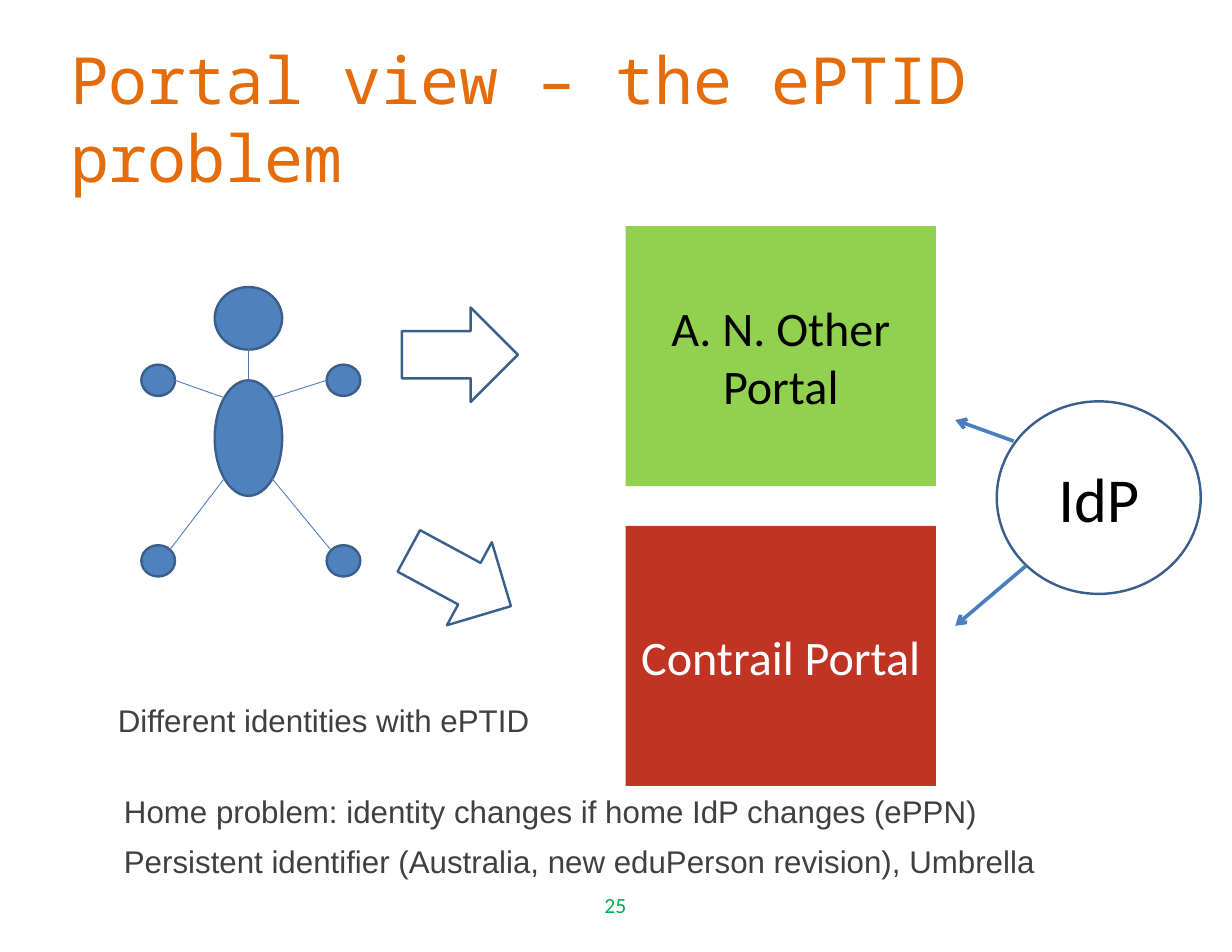
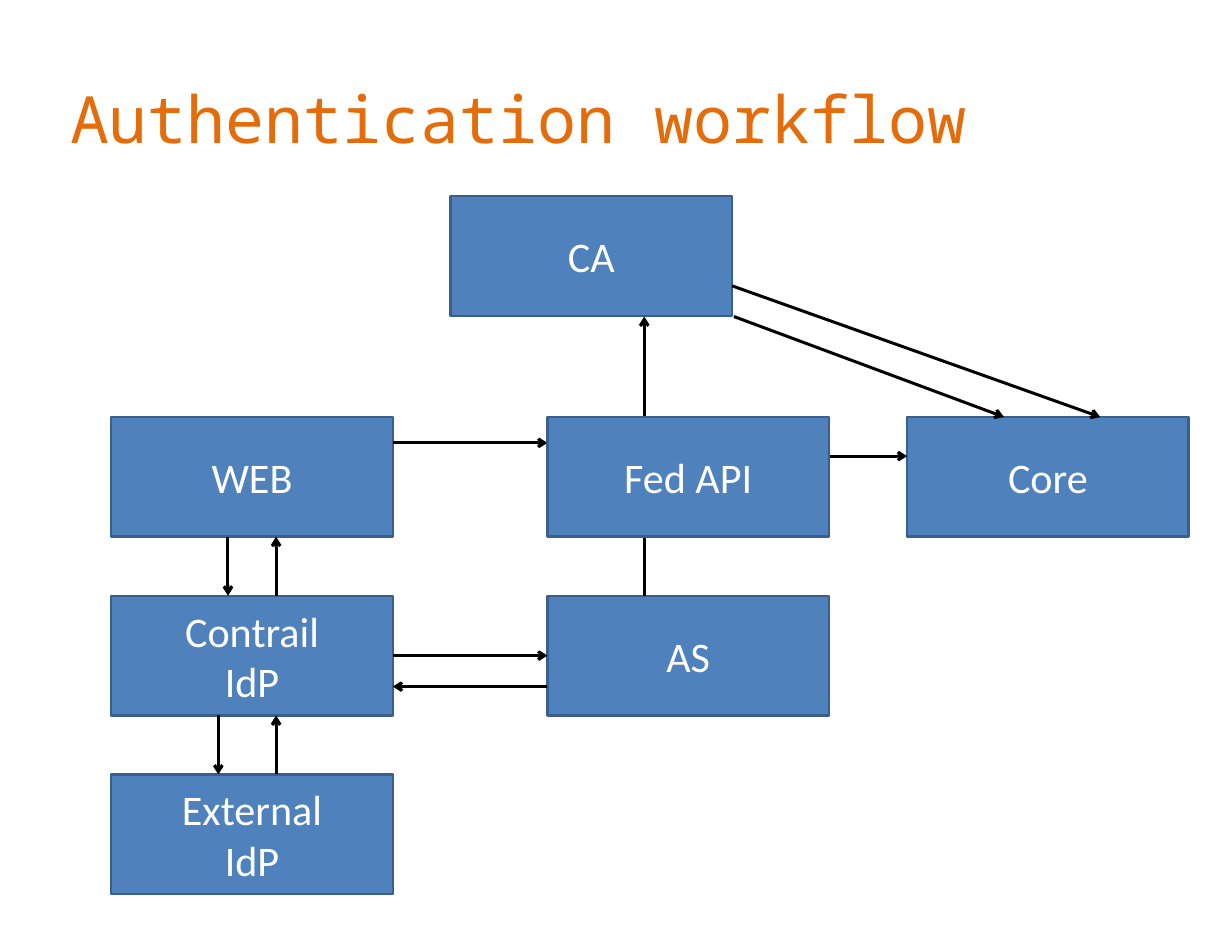
"""Build two slides on portals and log-in flow."""
from lxml.etree import SubElement
from pptx import Presentation
from pptx.dml.color import RGBColor
from pptx.enum.shapes import MSO_CONNECTOR as LINK, MSO_SHAPE as SHAPE
from pptx.enum.text import MSO_ANCHOR as ANCHOR, MSO_AUTO_SIZE as FIT, PP_ALIGN as ALIGN
from pptx.oxml.ns import qn
from pptx.util import Pt

ORANGE, GREEN, LIME, RED = "E46C0A", "00B050", "92D050", "C13424"
BLUE, EDGE, LIMB = "4F81BD", "3A5F8C", "4B7EBC"
BLACK, WHITE, GREY = "000000", "FFFFFF", "404040"
BOX_W, BOX_H, STEP = 234, 99.5, 148.5


def tint(color, value):
    """Set a colour format from a hex string."""
    color.rgb = RGBColor.from_string(value)


def write(frame, text, face, size, color, align=ALIGN.LEFT):
    """Put text in a frame and format every run."""
    frame.text = text
    for para in frame.paragraphs:
        para.alignment = align
        for run in para.runs:
            run.font.name = face
            run.font.size = Pt(size)
            tint(run.font.color, color)


def inset(frame):
    """Give a frame the shared margins."""
    frame.margin_left = frame.margin_right = Pt(10)
    frame.margin_top = frame.margin_bottom = Pt(5)


def add_page(deck, text):
    """Add a slide with the shared title style."""
    page = deck.slides.add_slide(deck.slide_layouts[5])
    title = page.shapes.title
    title.left, title.top, title.width, title.height = map(Pt, (51, 32, 922, 132))
    frame = title.text_frame
    frame.auto_size = FIT.NONE
    frame.vertical_anchor = ANCHOR.MIDDLE
    write(frame, text, "Noto Sans Mono", 54, ORANGE)
    return page.shapes


def add_form(shapes, kind, place, fill, edge=EDGE):
    """Add a filled shape, with an outline unless edge is None."""
    form = shapes.add_shape(kind, *map(Pt, place))
    form.shadow.inherit = False
    form.fill.solid()
    tint(form.fill.fore_color, fill)
    if edge:
        tint(form.line.color, edge)
        form.line.width = Pt(2)
    else:
        form.line.fill.background()
    return form


def label(form, text, size, color):
    """Centre text in a shape."""
    frame = form.text_frame
    inset(frame)
    frame.vertical_anchor = ANCHOR.MIDDLE
    write(frame, text, "Calibri", size, color, ALIGN.CENTER)


def add_line(shapes, ends, color, width, arrow=True):
    """Add a straight line, with an arrowhead at its end if asked."""
    line = shapes.add_connector(LINK.STRAIGHT, *map(Pt, ends))
    tint(line.line.color, color)
    line.line.width = Pt(width)
    props = line._element.spPr
    if arrow:
        SubElement(props.find(qn("a:ln")), qn("a:tailEnd"), type="arrow")
    SubElement(props, qn("a:effectLst"))
    return line


def add_note(shapes, place, text):
    """Add a one-line grey note."""
    frame = shapes.add_textbox(*map(Pt, place)).text_frame
    inset(frame)
    frame.word_wrap = False
    frame.auto_size = FIT.SHAPE_TO_FIT_TEXT
    write(frame, text, "Arial", 26, GREY)


def add_man(shapes):
    """Add a stick man as one group."""
    parts = shapes.add_group_shape().shapes
    joints = [(117.5, y, 28, 26) for y in (303, 453)]
    joints += [(271.5, y, 28, 26) for y in (303, 453)]
    for place in [(178.5, 238.5, 56, 52), (178.5, 316, 56, 96)] + joints:
        add_form(parts, SHAPE.OVAL, place, BLUE)
    for ends in ((206.5, 290, 206.5, 316), (145.5, 316, 186.5, 330.5),
                 (226, 330.5, 271.5, 316), (226, 397.5, 275, 457),
                 (186.5, 397.5, 141, 457)):
        add_line(parts, ends, LIMB, 0.75, False)


def add_portal(shapes, top, text, fill, color):
    """Add one portal block."""
    block = add_form(shapes, SHAPE.RECTANGLE, (520, top, 258, 216), fill, None)
    label(block, text, 40, color)


def add_box(shapes, left, top, text):
    """Add one blue box of the flow."""
    box = add_form(shapes, SHAPE.RECTANGLE, (left, top, BOX_W, BOX_H), BLUE)
    label(box, text, 35, WHITE)
    return box


def draw_view(deck):
    """Draw the slide on the portal view."""
    shapes = add_page(deck, "Portal view – the ePTID problem")
    frame = shapes.add_textbox(*map(Pt, (392, 736, 239, 42))).text_frame
    frame.word_wrap = True
    inset(frame)
    write(frame, "25", "Calibri", 18, GREEN, ALIGN.CENTER)
    add_man(shapes)
    for top, angle in ((255.5, 0), (441.5, 28.4)):
        arrow = add_form(shapes, SHAPE.RIGHT_ARROW, (334, top, 96.5, 78.5), WHITE)
        arrow.rotation = angle
    add_portal(shapes, 188, "A. N. Other\nPortal", LIME, BLACK)
    add_portal(shapes, 437, "Contrail Portal", RED, WHITE)
    ring = add_form(shapes, SHAPE.OVAL, (828.5, 333.5, 169.5, 160), WHITE)
    label(ring, "IdP", 52, BLACK)
    for ends in ((842.5, 366.5, 794, 349), (853, 470, 794, 520)):
        add_line(shapes, ends, LIMB, 3)
    add_note(shapes, (88, 578, 366, 42), "Different identities with ePTID")
    add_note(shapes, (93, 653, 738, 42),
             "Home problem: identity changes if home IdP changes (ePPN)")
    add_note(shapes, (93, 695, 786, 42),
             "Persistent identifier (Australia, new eduPerson revision), Umbrella")


def draw_flow(deck):
    """Draw the slide on the log-in flow."""
    shapes = add_page(deck, "Authentication workflow")
    left, mid, right = 92.5, 455, 754
    rows = [346.5 + STEP * i for i in range(3)]
    feet = [top + BOX_H for top in rows]
    side = left + BOX_W
    add_box(shapes, left, rows[0], "WEB")
    home = add_box(shapes, left, rows[1], "Contrail\nIdP")
    add_box(shapes, left, rows[2], "External\nIdP")
    add_box(shapes, 374.5, 163, "CA")
    server = add_box(shapes, mid, rows[1], "AS")
    add_box(shapes, right, rows[0], "Core")
    for down, foot, top in zip((189.5, 181.5), feet, rows[1:]):
        add_line(shapes, (down, foot, down, top), BLACK, 2.5)
        add_line(shapes, (229.5, top, 229.5, foot), BLACK, 2.5)
    for ends in ((mid, 570.5, side, 570.5), (side, 368, mid, 368),
                 (610, 263, 834.5, rows[0]), (608.5, 237.5, 914.5, rows[0]),
                 (mid + BOX_W, 379, right, 379), (535.5, rows[1], 535.5, 263)):
        add_line(shapes, ends, BLACK, 2.5)
    link = add_line(shapes, (side, 545, mid, 545), BLACK, 2.5)
    link.begin_connect(home, 3)
    link.end_connect(server, 1)
    add_box(shapes, mid, rows[0], "Fed API")


def main():
    """Build and save the deck."""
    deck = Presentation()
    deck.slide_width, deck.slide_height = Pt(1024), Pt(791)
    draw_view(deck)
    draw_flow(deck)
    deck.save("out.pptx")


if __name__ == "__main__":
    main()
